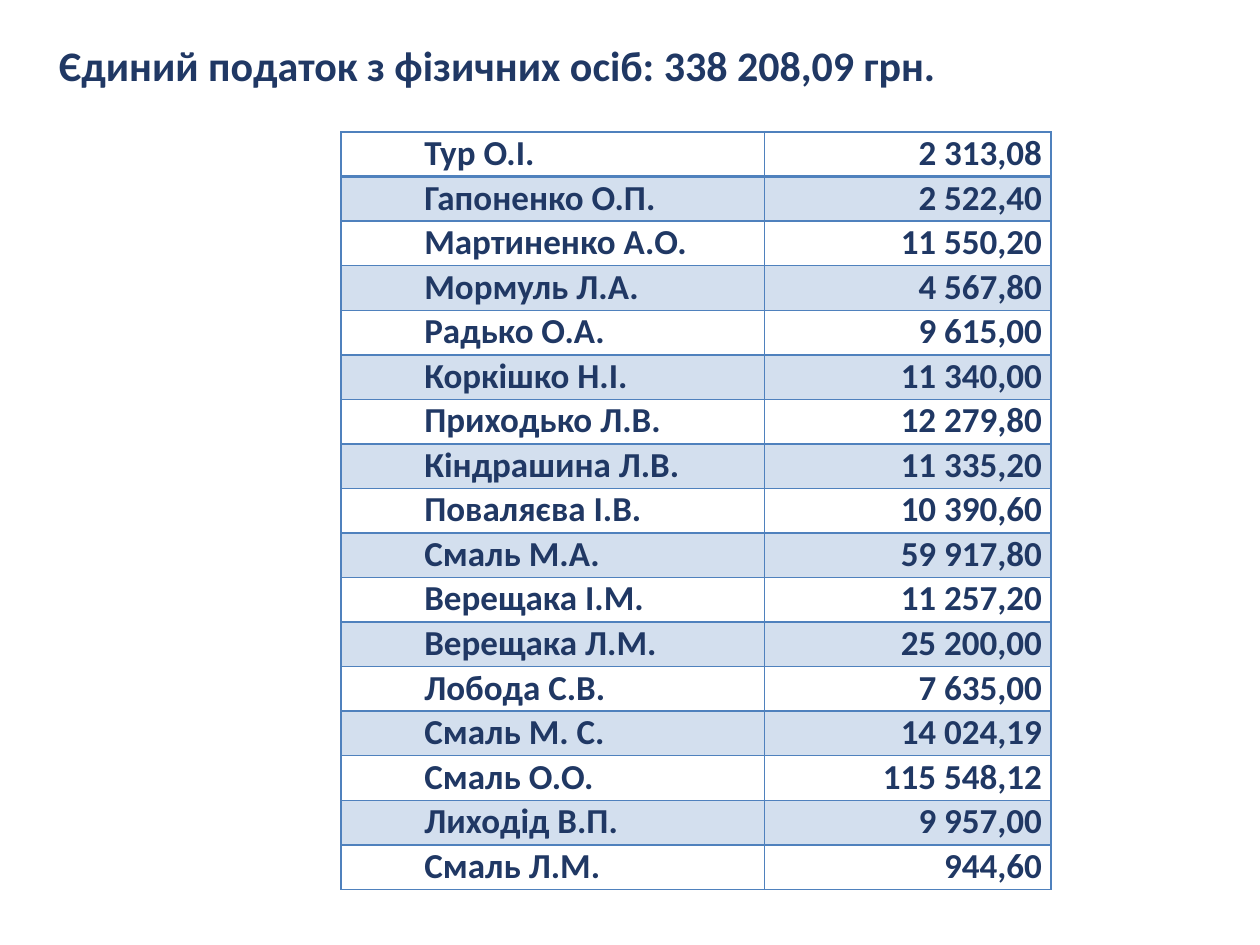
from lxml.etree import SubElement as Sub
from pptx import Presentation
from pptx.dml.color import RGBColor as RGB
from pptx.enum.text import PP_ALIGN as Align
from pptx.oxml.ns import qn
from pptx.util import Pt

TITLE = "Єдиний податок з фізичних осіб: 338 208,09 грн."
ROWS = [
    ("Тур О.І.", "2 313,08"),
    ("Гапоненко О.П.", "2 522,40"),
    ("Мартиненко А.О.", "11 550,20"),
    ("Мормуль Л.А.", "4 567,80"),
    ("Радько О.А.", "9 615,00"),
    ("Коркішко Н.І.", "11 340,00"),
    ("Приходько Л.В.", "12 279,80"),
    ("Кіндрашина Л.В.", "11 335,20"),
    ("Поваляєва І.В.", "10 390,60"),
    ("Смаль М.А.", "59 917,80"),
    ("Верещака І.М.", "11 257,20"),
    ("Верещака Л.М.", "25 200,00"),
    ("Лобода С.В.", "7 635,00"),
    ("Смаль М. С.", "14 024,19"),
    ("Смаль О.О.", "115 548,12"),
    ("Лиходід В.П.", "9 957,00"),
    ("Смаль Л.М.", "944,60"),
]
THEME = {
    "font": "Calibri", "ink": "203864", "line": "4F81BD",
    "bands": ("FFFFFF", "D3DFEE"), "title": 24, "body": 20,
    "thin": 1, "thick": 2.25,
}
WIDTHS = (242, 163.5)
ALIGNS = (Align.LEFT, Align.RIGHT)
LEFT, TOP, STEP = 195, 75.5, 25.47
PAD, INDENT = 5, 42.5


def style(para, size):
    font = para.font
    font.name, font.size, font.bold = THEME["font"], Pt(size), True
    font.color.rgb = RGB.from_string(THEME["ink"])


def border(cell, row):
    props = cell._tc.get_or_add_tcPr()
    heavy = {0: "B", 1: "T"}.get(row)
    for side in "LRTB":
        width = THEME["thick" if side == heavy else "thin"]
        line = Sub(props, qn(f"a:ln{side}"), w=str(Pt(width)))
        fill = Sub(line, qn("a:solidFill"))
        Sub(fill, qn("a:srgbClr"), val=THEME["line"])


def fill_cell(cell, text, row, align):
    cell.margin_left = cell.margin_right = Pt(PAD)
    cell.margin_top = cell.margin_bottom = 0
    border(cell, row)
    cell.fill.solid()
    cell.fill.fore_color.rgb = RGB.from_string(THEME["bands"][row % 2])
    para = cell.text_frame.paragraphs[0]
    para.text, para.alignment = text, align
    para._p.get_or_add_pPr().set("marL", str(Pt(INDENT)))
    style(para, THEME["body"])


def add_grid(slide):
    grid = slide.shapes.add_table(
        len(ROWS), len(WIDTHS), Pt(LEFT), Pt(TOP),
        Pt(sum(WIDTHS)), Pt(STEP * len(ROWS))).table
    grid.first_row = grid.horz_banding = False
    for col, width in zip(grid.columns, WIDTHS):
        col.width = Pt(width)
    for row, texts in enumerate(ROWS):
        grid.rows[row].height = Pt(STEP)
        for col, text in enumerate(texts):
            fill_cell(grid.cell(row, col), text, row, ALIGNS[col])


def add_title(slide):
    box = slide.shapes.add_textbox(Pt(26.5), Pt(19), Pt(605.5), Pt(36))
    frame = box.text_frame
    frame.word_wrap = True
    para = frame.paragraphs[0]
    para.text = TITLE
    style(para, THEME["title"])


def main():
    deck = Presentation()
    deck.slide_width, deck.slide_height = Pt(720), Pt(540)
    slide = deck.slides.add_slide(deck.slide_layouts[6])
    add_grid(slide)
    add_title(slide)
    deck.save("out.pptx")


if __name__ == "__main__":
    main()
